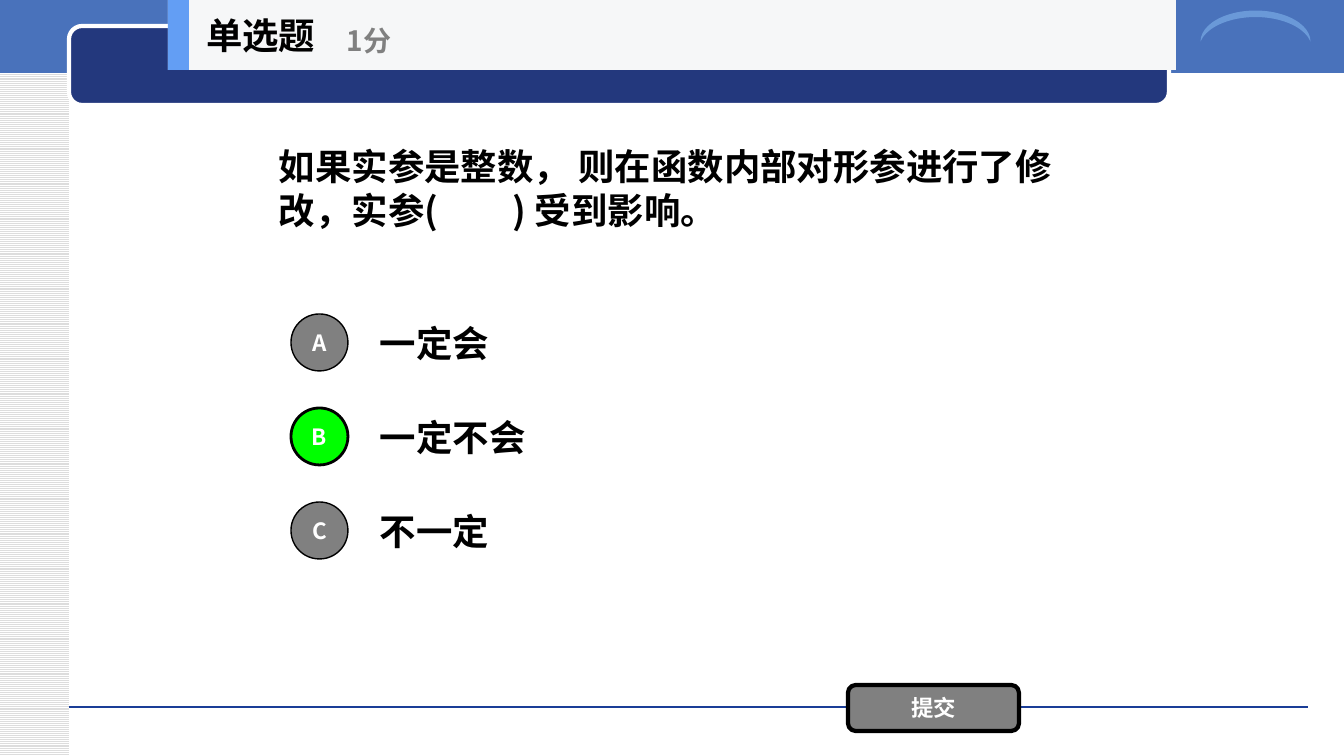
from lxml import etree
from pptx import Presentation
from pptx import util as u
from pptx.dml.color import RGBColor
from pptx.enum import dml, shapes, text
from pptx.oxml import ns

PX = 914400 / 100.8
FONT = "Noto Sans CJK SC"
SHAPE = shapes.MSO_SHAPE
C = {
    "white": "FFFFFF", "black": "000000", "grey": "808080", "stripe": "DDDDDD",
    "band": "4972BB", "navy": "23387D", "rule": "1A3D97", "moon": "6A99D8",
    "bar": "F6F7F8", "accent": "639EF4", "green": "00FF00",
}


def px(n):
    return u.Emu(round(n * PX))


def rgb(name):
    return RGBColor.from_string(C[name])


def write(sp, words, size, color, align=text.PP_ALIGN.LEFT):
    """Put one bold run, vertically centred, into a shape."""
    tf = sp.text_frame
    tf.word_wrap = True
    tf.auto_size = text.MSO_AUTO_SIZE.NONE
    tf.vertical_anchor = text.MSO_ANCHOR.MIDDLE
    p = tf.paragraphs[0]
    p.alignment = align
    r = p.add_run()
    r.text = words
    r.font.size, r.font.bold, r.font.name = u.Pt(size), True, FONT
    r.font.color.rgb = rgb(color)
    etree.SubElement(r.font._element, ns.qn("a:ea"), typeface=FONT)
    return p


def add_text(s, box, words, size, color):
    return write(s.shapes.add_textbox(*map(px, box)), words, size, color)


def add_box(s, kind, box, fill, line=None, width=1):
    sp = s.shapes.add_shape(kind, *map(px, box))
    sp.shadow.inherit = False
    sp.fill.solid()
    sp.fill.fore_color.rgb = rgb(fill)
    if line:
        sp.line.color.rgb = rgb(line)
        sp.line.width = u.Pt(width)
    else:
        sp.line.fill.background()
    return sp


def add_button(s, kind, box, label, fill, width):
    sp = add_box(s, kind, box, fill, "black", width)
    tf = sp.text_frame
    tf.margin_left = tf.margin_right = tf.margin_top = tf.margin_bottom = 0
    write(sp, label, 16, "white", text.PP_ALIGN.CENTER)


def backdrop(s, w, h):
    margin = add_box(s, SHAPE.RECTANGLE, (0, 0, 69, h), "white")
    margin.fill.patterned()
    margin.fill.pattern = dml.MSO_PATTERN.LIGHT_HORIZONTAL
    margin.fill.fore_color.rgb = rgb("stripe")
    margin.fill.back_color.rgb = rgb("white")

    add_box(s, SHAPE.RECTANGLE, (0, -3, w, 76), "band")
    rule = s.shapes.add_connector(
        shapes.MSO_CONNECTOR.STRAIGHT, px(69), px(h - 49), px(w - 36), px(h - 49))
    rule.line.color.rgb = rgb("rule")
    rule.line.width = u.Pt(0)
    etree.SubElement(rule._element.spPr, ns.qn("a:effectLst"))

    add_box(s, SHAPE.ROUNDED_RECTANGLE, (69, 26, 1100, 79), "navy", "white", 3)
    moon = add_box(s, SHAPE.MOON, (w - 104, -29, 31, 110), "moon")
    moon.rotation = 90
    moon.adjustments[0] = 0.21


def header(s, x, y, w, h):
    add_box(s, SHAPE.RECTANGLE, (x, y, w, h), "bar")
    add_box(s, SHAPE.RECTANGLE, (x, y, 21, h), "accent")
    title = s.shapes.title
    title.left, title.top, title.width, title.height = map(px, (x + 28, y, 160, h))
    write(title, "单选题", 26, "black")
    s.shapes._spTree.append(title._element)  # bring in front of the bar
    add_text(s, (x + 169, y + 12, 252, 56), "1分", 20, "grey")


def question(s, x, y, w, h):
    p = add_text(s, (x, y, w, h),
                 "如果实参是整数， 则在函数内部对形参进行了修改，实参(\t) 受到影响。",
                 26, "black")
    # the tab stop sets the width of the blank to fill in
    tabs = etree.SubElement(p._p.get_or_add_pPr(), ns.qn("a:tabLst"))
    etree.SubElement(tabs, ns.qn("a:tab"), pos=str(px(234)), algn="l")


def options(s, x, y, w, answers, correct):
    size, row, step = 57, 71, 94
    for i, answer in enumerate(answers):
        top = y + i * step
        right = i == correct
        add_text(s, (x + 79, top, w - 79, row), answer, 26, "black")
        add_button(s, SHAPE.OVAL, (x, top + (row - size) // 2, size, size),
                   "ABC"[i], "green" if right else "grey", 2 if right else 1)


def main():
    prs = Presentation()
    prs.slide_width, prs.slide_height = px(1344), px(756)
    s = prs.slides.add_slide(prs.slide_layouts[5])
    backdrop(s, 1344, 756)
    question(s, 269, 70, 806, 236)
    options(s, 291, 307, 785, ["一定会", "一定不会", "不一定"], correct=1)
    add_button(s, SHAPE.ROUNDED_RECTANGLE, (848, 685, 171, 46), "提交", "grey", 3)
    header(s, 168, 0, 1008, 70)
    prs.save("out.pptx")


if __name__ == "__main__":
    main()
